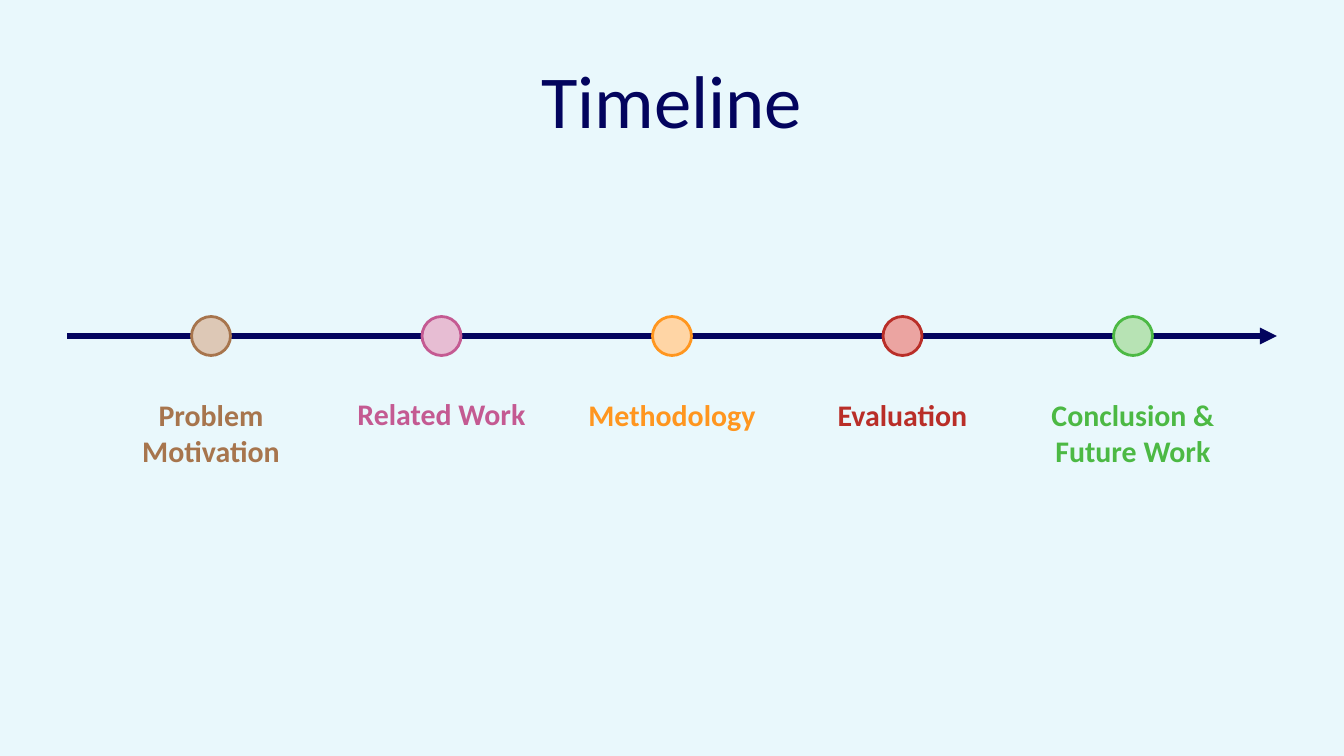
"""Build a timeline slide with five milestones along one arrow."""
from lxml import etree
from pptx import Presentation, util as u
from pptx.dml.color import RGBColor
from pptx.enum import shapes, text
from pptx.oxml.ns import qn

NAVY = RGBColor(0x03, 0x04, 0x5E)
PALE_BLUE = RGBColor(0xE9, 0xF8, 0xFC)
BROWN, SAND = RGBColor(0xA7, 0x75, 0x4D), RGBColor(0xDD, 0xC8, 0xB6)
MAGENTA, PINK = RGBColor(0xC4, 0x5A, 0x92), RGBColor(0xE7, 0xBD, 0xD3)
ORANGE, PEACH = RGBColor(0xFF, 0x96, 0x1F), RGBColor(0xFF, 0xD5, 0xA5)
RED, SALMON = RGBColor(0xB9, 0x2E, 0x28), RGBColor(0xEB, 0xA4, 0xA1)
GREEN, MINT = RGBColor(0x4C, 0xB9, 0x44), RGBColor(0xB7, 0xE3, 0xB4)

WIDTH, HEIGHT = u.Inches(20), u.Inches(11.25)
MARGIN = WIDTH // 20
COLUMN = u.Inches(3.43)
AXIS = u.Inches(5)
DOT = u.Inches(0.58)
LABEL_WIDTH = u.Inches(3.08)
LABEL_ROW = u.Inches(5.86)
ONE_LINE, TWO_LINES = u.Inches(0.64), u.Inches(1.18)

MILESTONES = [
    ("Problem Motivation", BROWN, SAND, LABEL_ROW, TWO_LINES),
    ("Related Work", MAGENTA, PINK, u.Inches(5.84), ONE_LINE),
    ("Methodology", ORANGE, PEACH, LABEL_ROW, ONE_LINE),
    ("Evaluation", RED, SALMON, LABEL_ROW, ONE_LINE),
    ("Conclusion & Future Work", GREEN, MINT, LABEL_ROW, TWO_LINES),
]

presentation = Presentation()
presentation.slide_width, presentation.slide_height = WIDTH, HEIGHT
slide = presentation.slides.add_slide(presentation.slide_layouts[6])
slide.background.fill.solid()
slide.background.fill.fore_color.rgb = PALE_BLUE


def add_text(words, *, left, top, width, height, size, color, bold=False):
    box = slide.shapes.add_textbox(left, top, width, height)
    frame = box.text_frame
    frame.word_wrap = True
    frame.auto_size = text.MSO_AUTO_SIZE.SHAPE_TO_FIT_TEXT
    paragraph = frame.paragraphs[0]
    paragraph.alignment = text.PP_ALIGN.CENTER
    run = paragraph.add_run()
    run.text = words
    run.font.name = "Calibri"
    run.font.size = u.Pt(size)
    run.font.bold = bold
    run.font.color.rgb = color


add_text("Timeline", left=WIDTH // 10, top=HEIGHT // 15, width=WIDTH * 8 // 10,
         height=u.Inches(1.45), size=80, color=NAVY)

timeline = slide.shapes.add_group_shape()
arrow = timeline.shapes.add_connector(
    shapes.MSO_CONNECTOR.STRAIGHT, MARGIN, AXIS, WIDTH - MARGIN, AXIS)
arrow.line.color.rgb = NAVY
arrow.line.width = u.Pt(6)
etree.SubElement(arrow.line._get_or_add_ln(), qn("a:tailEnd"), type="triangle")
etree.SubElement(arrow._element.spPr, qn("a:effectLst"))

for index, (name, color, tint, top, height) in enumerate(MILESTONES):
    center = WIDTH // 2 + (index - len(MILESTONES) // 2) * COLUMN
    dot = timeline.shapes.add_shape(
        shapes.MSO_SHAPE.OVAL, center - DOT // 2, AXIS - DOT // 2, DOT, DOT)
    dot.shadow.inherit = False
    dot.fill.solid()
    dot.fill.fore_color.rgb = tint
    dot.line.color.rgb = color
    dot.line.width = u.Pt(3)
    add_text(name, left=center - LABEL_WIDTH // 2, top=top, width=LABEL_WIDTH,
             height=height, size=32, color=color, bold=True)

presentation.save("out.pptx")
